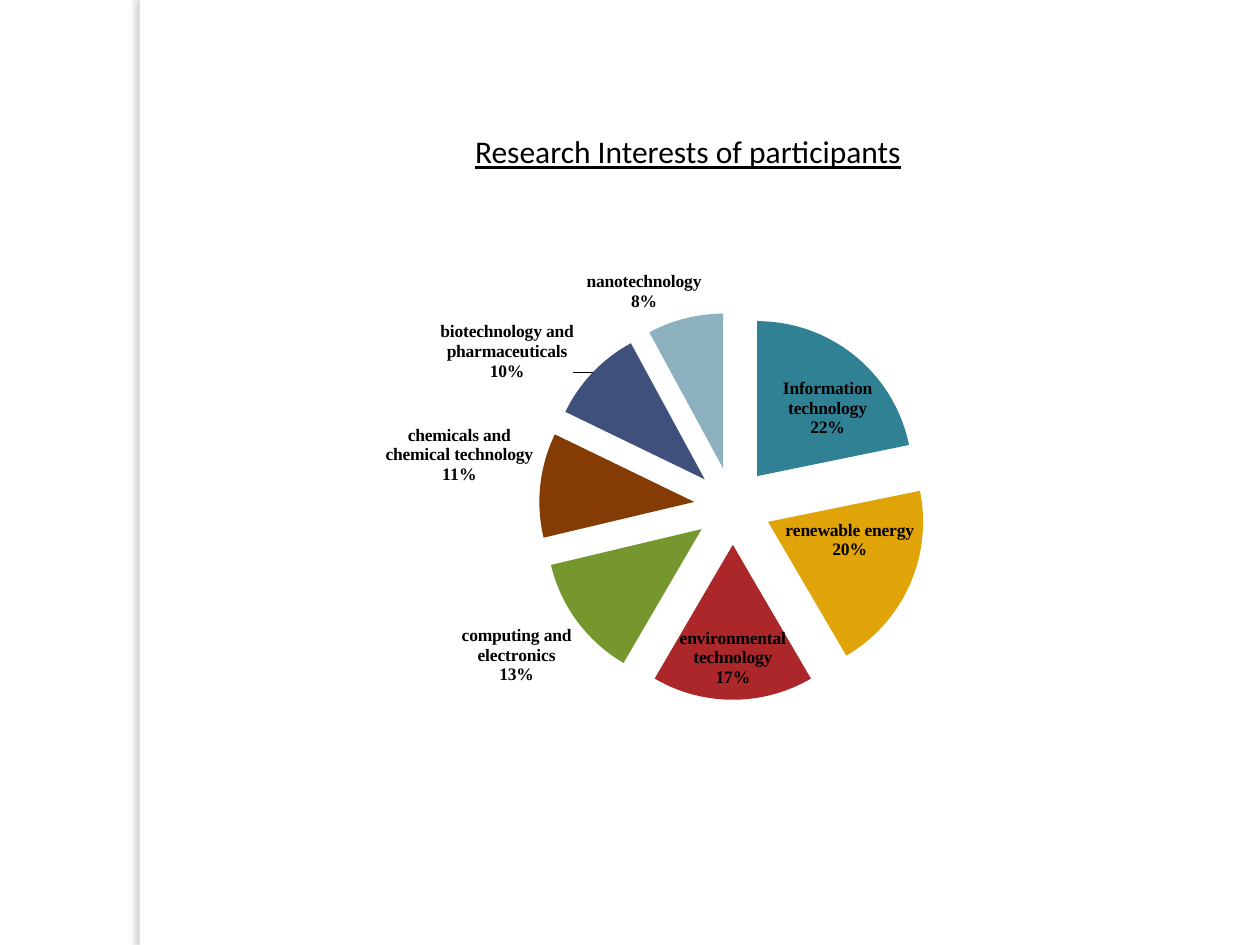
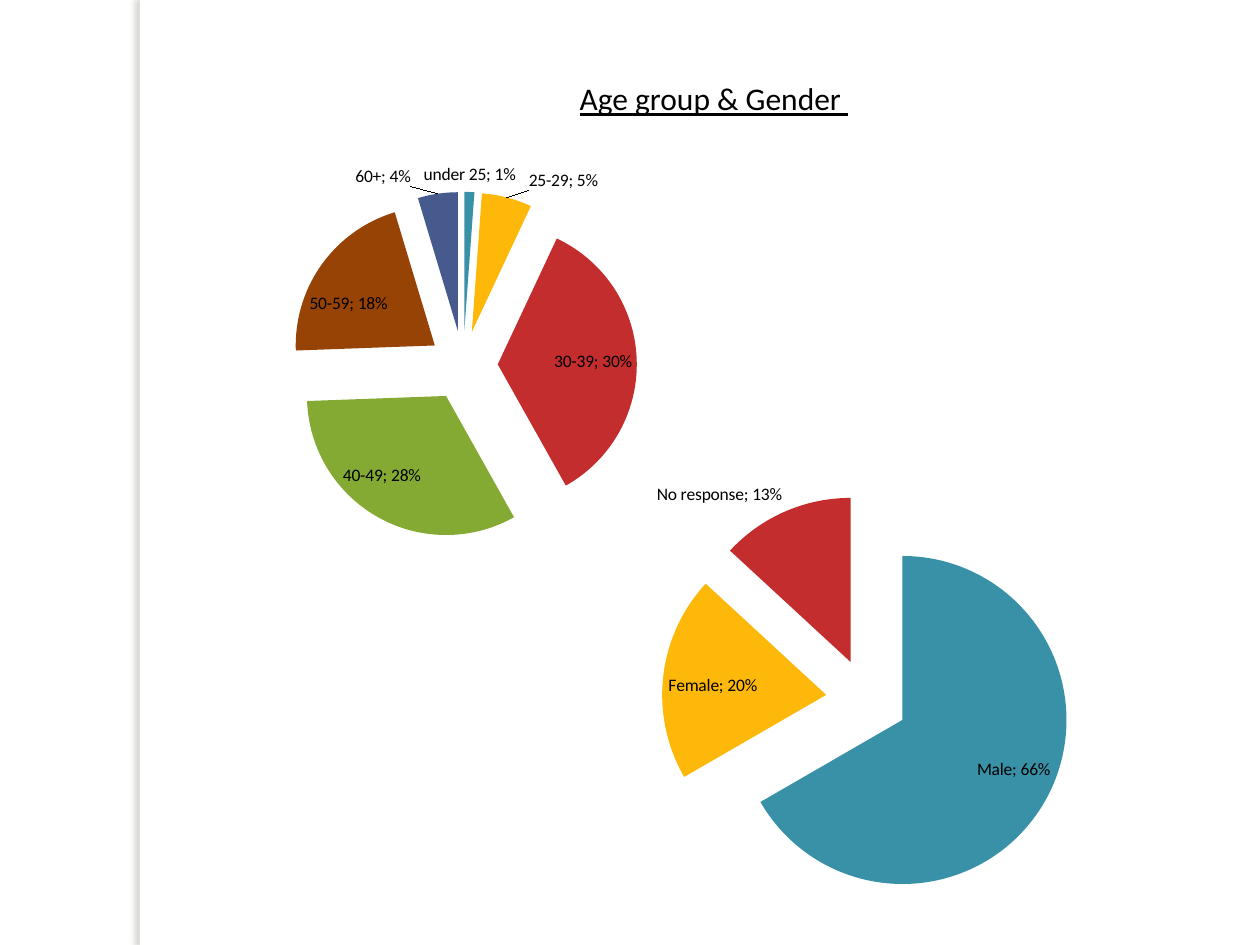
from dataclasses import dataclass

from lxml import etree
from pptx import Presentation
from pptx.chart.data import CategoryChartData
from pptx.dml.color import RGBColor
from pptx.enum.chart import XL_CHART_TYPE, XL_LABEL_POSITION
from pptx.enum.shapes import MSO_SHAPE
from pptx.enum.text import MSO_ANCHOR, PP_ALIGN
from pptx.oxml import parse_xml
from pptx.oxml.ns import nsdecls, qn
from pptx.util import Inches, Pt

EXPLODED_PIE = XL_CHART_TYPE.PIE_EXPLODED
BEST_FIT = XL_LABEL_POSITION.BEST_FIT
RECTANGLE = MSO_SHAPE.RECTANGLE
TOP = MSO_ANCHOR.TOP
LEFT = PP_ALIGN.LEFT
TITLE_ONLY = 5


@dataclass(frozen=True)
class Theme:
    """Colours, fonts and type sizes shared by the slides."""

    text: str = "000000"
    band: str = "FFFFFF"
    band_shadow: str = "736F63"
    font: str = "Calibri"
    serif: str = "Times New Roman"
    title_size: int = 18
    label_size: int = 10
    slices: tuple = ("3891A7", "FEB80A", "C32D2E", "84AA33", "964305", "475A8D")
    deep_slices: tuple = ("308194", "E0A308", "AB2729", "75972D", "843C04",
                          "3E507B", "8DB1BF")


THEME = Theme()


def rgb(value):
    """Turn a hex string into a colour."""
    return RGBColor.from_string(value)


def style_font(font, size, name=THEME.font):
    """Apply the common text colour with a size and typeface."""
    font.size = Pt(size)
    font.name = name
    font.color.rgb = rgb(THEME.text)


def add_band(slide):
    """Draw the white vertical band with its soft shadow to the left."""
    band = slide.shapes.add_shape(
        RECTANGLE, Inches(1.11), 0, Inches(0.08), Inches(7.5))
    band.fill.solid()
    band.fill.fore_color.rgb = rgb(THEME.band)
    band.line.fill.background()
    band.shadow.inherit = False
    effects = band.element.spPr.find(qn("a:effectLst"))
    effects.append(parse_xml(
        f'<a:outerShdw {nsdecls("a")} blurRad="{Pt(3)}" dist="{Pt(3)}" '
        f'dir="10800000" algn="tl" rotWithShape="0">'
        f'<a:srgbClr val="{THEME.band_shadow}"><a:alpha val="25000"/></a:srgbClr>'
        f'</a:outerShdw>'))


def set_title(slide, text, left, top, width):
    """Place the underlined slide title."""
    title = slide.shapes.title
    title.left, title.top = Inches(left), Inches(top)
    title.width, title.height = Inches(width), Inches(0.4)
    frame = title.text_frame
    frame.word_wrap = False
    frame.vertical_anchor = TOP
    paragraph = frame.paragraphs[0]
    paragraph.alignment = LEFT
    run = paragraph.add_run()
    run.text = text
    style_font(run.font, THEME.title_size)
    run.font.underline = True


def add_slide(prs, title, left, top, width):
    """Add a slide with the shared band and title style."""
    slide = prs.slides.add_slide(prs.slide_layouts[TITLE_ONLY])
    add_band(slide)
    set_title(slide, title, left, top, width)
    return slide


def add_pie(slide, box, shares, colours, number_format="0%"):
    """Add an exploded pie with one colour per share."""
    data = CategoryChartData(number_format=number_format)
    data.categories = list(shares)
    data.add_series("Series 1", list(shares.values()))
    chart = slide.shapes.add_chart(
        EXPLODED_PIE, *(Inches(length) for length in box), data).chart
    chart.has_title = False
    chart.has_legend = False
    style_font(chart.font, THEME.label_size)
    pie = chart.plots[0]
    pie.vary_by_categories = True
    for index, colour in zip(range(len(shares)), colours):
        fill = pie.series[0].points[index].format.fill
        fill.solid()
        fill.fore_color.rgb = rgb(colour)
    return chart


def label_slices(chart, separator, percent=False, font=THEME.font, bold=False):
    """Label each slice with its category and its share."""
    labels = chart.plots[0].series[0].data_labels
    labels.number_format = "0%"
    labels.number_format_is_linked = False
    labels.show_category_name = True
    labels.show_percentage = percent
    labels.show_value = not percent
    labels.position = BEST_FIT
    style_font(labels.font, THEME.label_size, font)
    labels.font.bold = bold
    divider = etree.Element(qn("c:separator"))
    divider.text = separator
    chart.element.xpath(".//c:ser/c:dLbls/c:showBubbleSize")[0].addnext(divider)


def set_plot_area(chart, x, y, w, h):
    """Fix the inner plot area as fractions of the chart."""
    plot_area = chart.element.xpath(".//c:plotArea")[0]
    for layout in plot_area.findall(qn("c:layout")):
        plot_area.remove(layout)
    sizes = "".join(f'<c:{key} val="{value}"/>'
                    for key, value in zip("xywh", (x, y, w, h)))
    plot_area.insert(0, parse_xml(
        f'<c:layout {nsdecls("c")}><c:manualLayout><c:layoutTarget val="inner"/>'
        f'<c:xMode val="edge"/><c:yMode val="edge"/>{sizes}'
        f'</c:manualLayout></c:layout>'))


def build_interests(prs):
    """Build the slide on research interests."""
    slide = add_slide(prs, "Research Interests of participants", 3.67, 1, 3.61)
    interests = {
        "Information technology": 22,
        "renewable energy": 20,
        "environmental technology": 17,
        "computing and electronics": 13,
        "chemicals and chemical technology": 11,
        "biotechnology and pharmaceuticals": 10,
        "nanotechnology": 8,
    }
    chart = add_pie(slide, (2.08, 2, 6.82, 4.22), interests,
                    THEME.deep_slices, "General")
    label_slices(chart, "\n", percent=True, font=THEME.serif, bold=True)


def build_age_and_gender(prs):
    """Build the slide on age groups and gender."""
    slide = add_slide(prs, "Age group & Gender ", 4.5, 0.58, 2.41)
    ages = {"under 25": 0.01, "25-29": 0.05, "30-39": 0.3,
            "40-49": 0.28, "50-59": 0.18, "60+": 0.04}
    genders = {"Male": 0.66, "Female": 0.2, "No response": 0.13}
    age_chart = add_pie(slide, (1.08, 1.17, 5.25, 3.25), ages, THEME.slices)
    gender_chart = add_pie(slide, (4.25, 3.75, 5.37, 3.5), genders, THEME.slices)
    for chart in (age_chart, gender_chart):
        label_slices(chart, "; ")
    set_plot_area(gender_chart, 0.01, 0.05, 0.96, 0.93)


def main():
    """Build and save the presentation."""
    prs = Presentation()
    prs.slide_width, prs.slide_height = Inches(10), Inches(7.5)
    build_interests(prs)
    build_age_and_gender(prs)
    prs.save("out.pptx")


if __name__ == "__main__":
    main()
